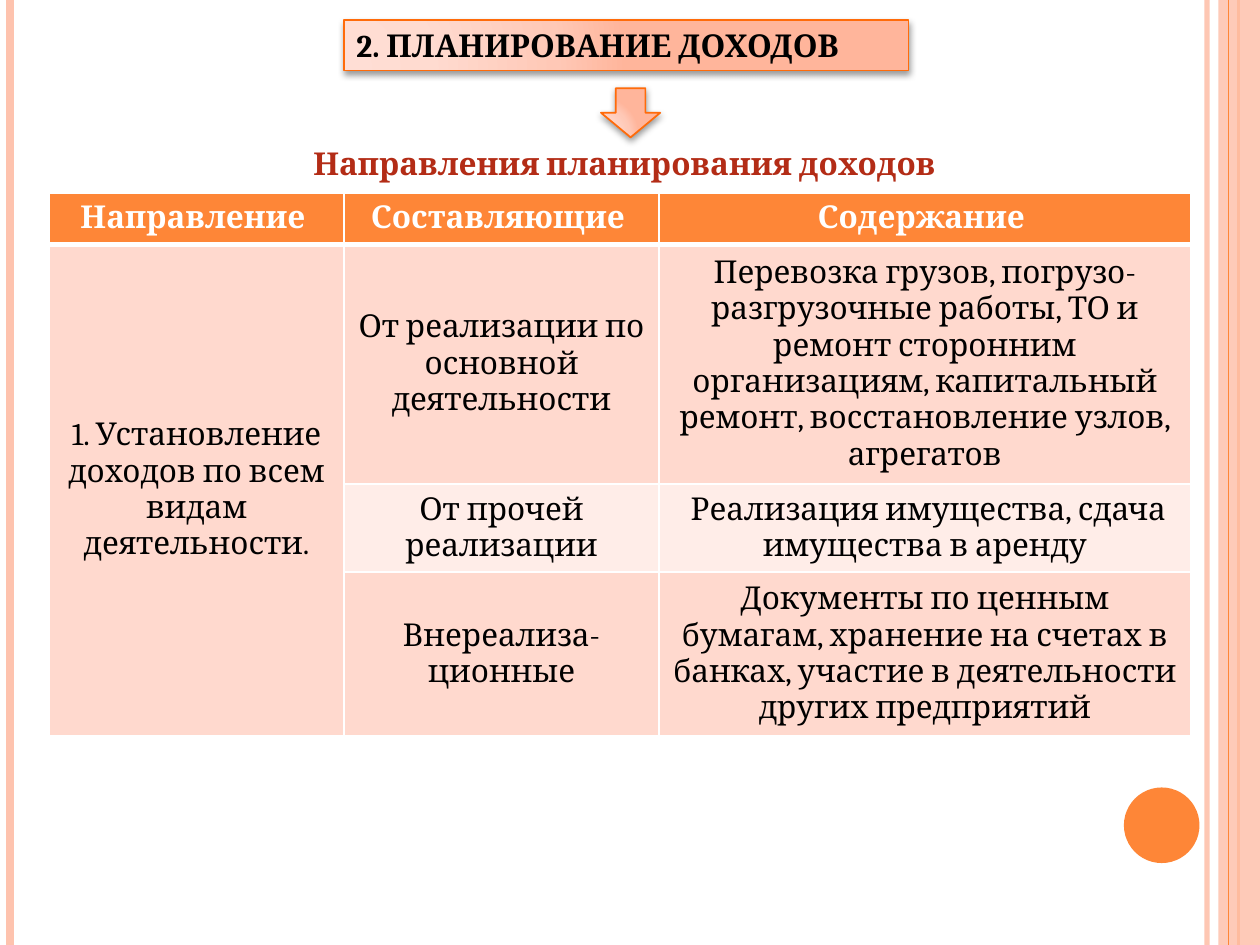
from dataclasses import dataclass

from lxml.etree import SubElement
from pptx import Presentation
from pptx.dml.color import RGBColor
from pptx.enum.shapes import MSO_CONNECTOR, MSO_SHAPE
from pptx.enum.text import MSO_ANCHOR, PP_ALIGN
from pptx.oxml import parse_xml
from pptx.oxml.ns import nsdecls, qn
from pptx.util import Inches, Pt

ACCENT, PALE, OUTLINE, WHITE, BLACK = "FE8637", "FEC3AE", "FF6B0A", "FFFFFF", "000000"
HEADER = ("Направление ", "Составляющие ", "Содержание ")
DIRECTION = "1. Установление доходов по всем видам деятельности."
INCOME = (
    ("От реализации по основной деятельности",
     "Перевозка грузов, погрузо-разгрузочные работы, ТО и ремонт сторонним "
     "организациям, капитальный ремонт, восстановление узлов, агрегатов"),
    ("От прочей реализации", " Реализация имущества, сдача имущества в аренду"),
    ("Внереализа-ционные",
     "Документы по ценным бумагам, хранение на счетах в банках, "
     "участие в деятельности других предприятий"),
)
COLUMN_WIDTHS = (2.34, 2.5, 4.22)
ROW_HEIGHTS = (0.41, 1.9, 0.7, 1.3)
GLOW_STOPS = ((0, "FFDED5"), (30, "FFDBD0"), (75, "FFC8B6"), (100, "FFB59B"))


@dataclass(frozen=True)
class Stripe:
    x: float
    color: str
    width: float
    opacity: int = 100


@dataclass(frozen=True)
class Box:
    left: float
    top: float
    width: float
    height: float

    def lengths(self) -> tuple:
        return tuple(Inches(v) for v in (self.left, self.top, self.width, self.height))


LEFT_STRIPES = (Stripe(9.58, PALE, 3, 93), Stripe(0.08, PALE, 4.5), Stripe(9.83, ACCENT, 1.5))
TOP_STRIPE = Stripe(9.75, ACCENT, 0.75)


def paint(color_format, color: str) -> None:
    color_format.rgb = RGBColor.from_string(color)


def fill_solid(fill, color: str) -> None:
    fill.solid()
    paint(fill.fore_color, color)


def set_opacity(element, percent: int) -> None:
    color = next(element.iter(qn("a:srgbClr")))
    SubElement(color, qn("a:alpha"), val=str(percent * 1000))


def write(frame, text: str, color: str, bold: bool, align=PP_ALIGN.CENTER) -> None:
    frame.word_wrap = True
    paragraph = frame.paragraphs[0]
    paragraph.alignment = align
    run = paragraph.add_run()
    run.text = text
    for name, value in {"name": "Cambria", "size": Pt(18), "bold": bold}.items():
        setattr(run.font, name, value)
    paint(run.font.color, color)


def draw_stripe(slide, stripe: Stripe) -> None:
    line = slide.shapes.add_connector(
        MSO_CONNECTOR.STRAIGHT, Inches(stripe.x), Inches(0), Inches(stripe.x), Inches(7.5))
    paint(line.line.color, stripe.color)
    line.line.width = Pt(stripe.width)
    if stripe.opacity < 100:
        set_opacity(line.line._get_or_add_ln(), stripe.opacity)
    SubElement(line._element.spPr, qn("a:effectLst"))


def draw_plain(slide, preset, box: Box, color: str):
    shape = slide.shapes.add_shape(preset, *box.lengths())
    shape.shadow.inherit = False
    fill_solid(shape.fill, color)
    shape.line.fill.background()
    return shape


def draw_glowing(slide, preset, box: Box):
    shape = draw_plain(slide, preset, box, PALE)
    paint_line = shape.line
    paint_line.fill.solid()
    paint(paint_line.color, OUTLINE)
    paint_line.width = Pt(1)
    properties = shape._element.spPr
    stops = "".join(f'<a:gs pos="{pos * 1000}"><a:srgbClr val="{color}"/></a:gs>'
                    for pos, color in GLOW_STOPS)
    gradient = parse_xml(
        f'<a:gradFill {nsdecls("a")} rotWithShape="1"><a:gsLst>{stops}</a:gsLst>'
        '<a:path path="circle"><a:fillToRect l="5000" t="100000" r="120000" b="10000"/>'
        '</a:path></a:gradFill>')
    properties.replace(properties.find(qn("a:solidFill")), gradient)
    shadow = SubElement(properties.find(qn("a:effectLst")), qn("a:outerShdw"),
                        blurRad=str(Pt(4)), dist=str(Pt(2)), dir="5400000", rotWithShape="0")
    SubElement(shadow, qn("a:srgbClr"), val=BLACK)
    set_opacity(shadow, 40)
    return shape


def draw_borders(cell, bottom: float) -> None:
    properties = cell._tc.get_or_add_tcPr()
    widths = {"lnL": 1, "lnR": 1, "lnT": 1, "lnB": bottom}
    for position, (side, width) in enumerate(widths.items()):
        properties.insert(position, parse_xml(
            f'<a:{side} {nsdecls("a")} w="{Pt(width)}"><a:solidFill>'
            f'<a:srgbClr val="{WHITE}"/></a:solidFill></a:{side}>'))


def draw_income_table(slide) -> None:
    box = Box(0.39, 1.53, sum(COLUMN_WIDTHS), sum(ROW_HEIGHTS))
    table = slide.shapes.add_table(
        len(ROW_HEIGHTS), len(COLUMN_WIDTHS), *box.lengths()).table
    for column, width in zip(table.columns, COLUMN_WIDTHS):
        column.width = Inches(width)
    for row, height in zip(table.rows, ROW_HEIGHTS):
        row.height = Inches(height)
    rows = [HEADER] + [(DIRECTION if i == 0 else "", *parts) for i, parts in enumerate(INCOME)]
    for r, texts in enumerate(rows):
        is_header = r == 0
        for c, text in enumerate(texts):
            cell = table.cell(r, c)
            band = "FFEDE8" if r == 2 and c > 0 else "FFD9CE"
            fill_solid(cell.fill, ACCENT if is_header else band)
            draw_borders(cell, 3 if is_header else 1)
            cell.vertical_anchor = MSO_ANCHOR.MIDDLE
            if text:
                write(cell.text_frame, text, WHITE if is_header else BLACK, is_header)
    table.cell(1, 0).merge(table.cell(len(INCOME), 0))


def main() -> None:
    deck = Presentation()
    deck.slide_width, deck.slide_height = Inches(10), Inches(7.5)
    slide = deck.slides.add_slide(deck.slide_layouts[6])

    for stripe in LEFT_STRIPES:
        draw_stripe(slide, stripe)
    margin = draw_plain(slide, MSO_SHAPE.RECTANGLE, Box(9.67, 0, 0.33, 7.5), PALE)
    set_opacity(margin._element.spPr, 87)
    draw_stripe(slide, TOP_STRIPE)
    draw_plain(slide, MSO_SHAPE.OVAL, Box(8.92, 6.25, 0.6, 0.6), ACCENT)

    title = draw_glowing(slide, MSO_SHAPE.RECTANGLE, Box(2.73, 0.16, 4.48, 0.4))
    write(title.text_frame, "2. ПЛАНИРОВАНИЕ ДОХОДОВ", BLACK, True, PP_ALIGN.LEFT)
    draw_glowing(slide, MSO_SHAPE.DOWN_ARROW, Box(4.77, 0.7, 0.47, 0.39))
    subtitle = slide.shapes.add_textbox(*Box(2.34, 1.09, 5.29, 0.4).lengths())
    write(subtitle.text_frame, "Направления планирования доходов ", "B32C16", True)
    draw_income_table(slide)

    deck.save("out.pptx")


if __name__ == "__main__":
    main()
